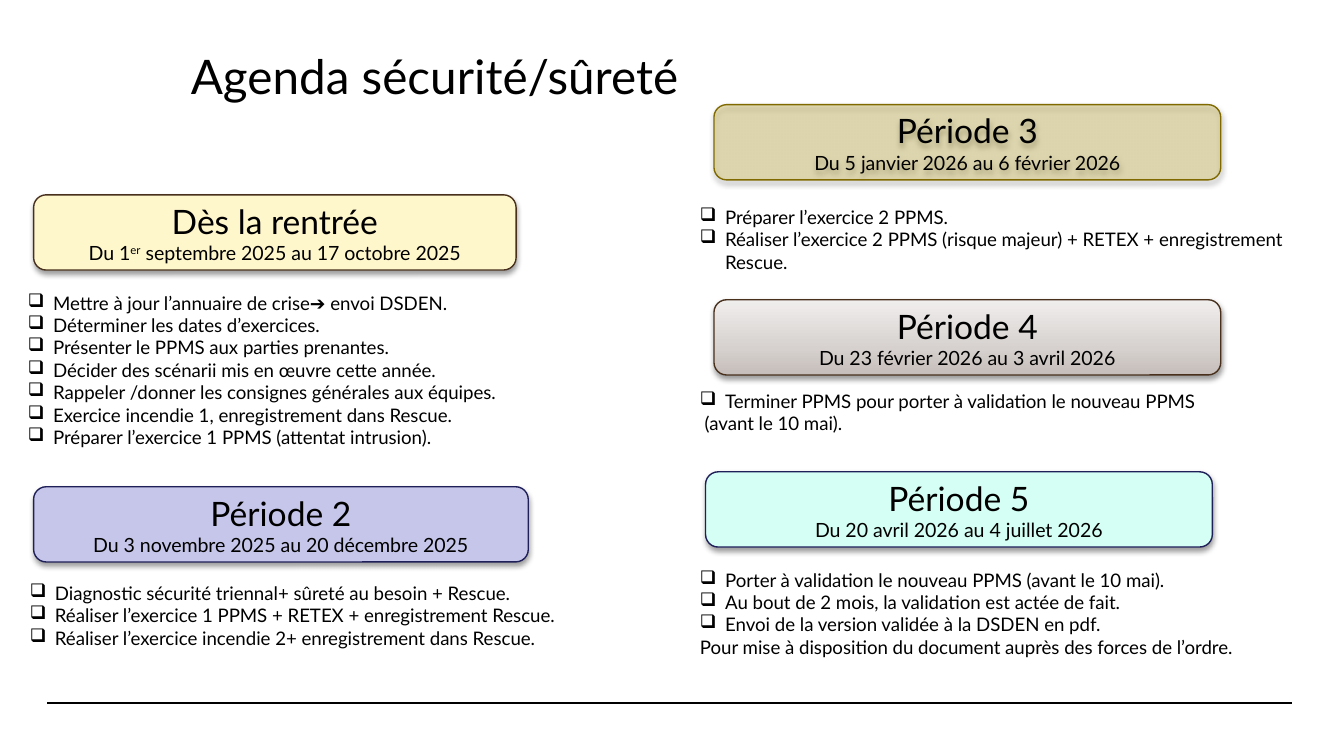
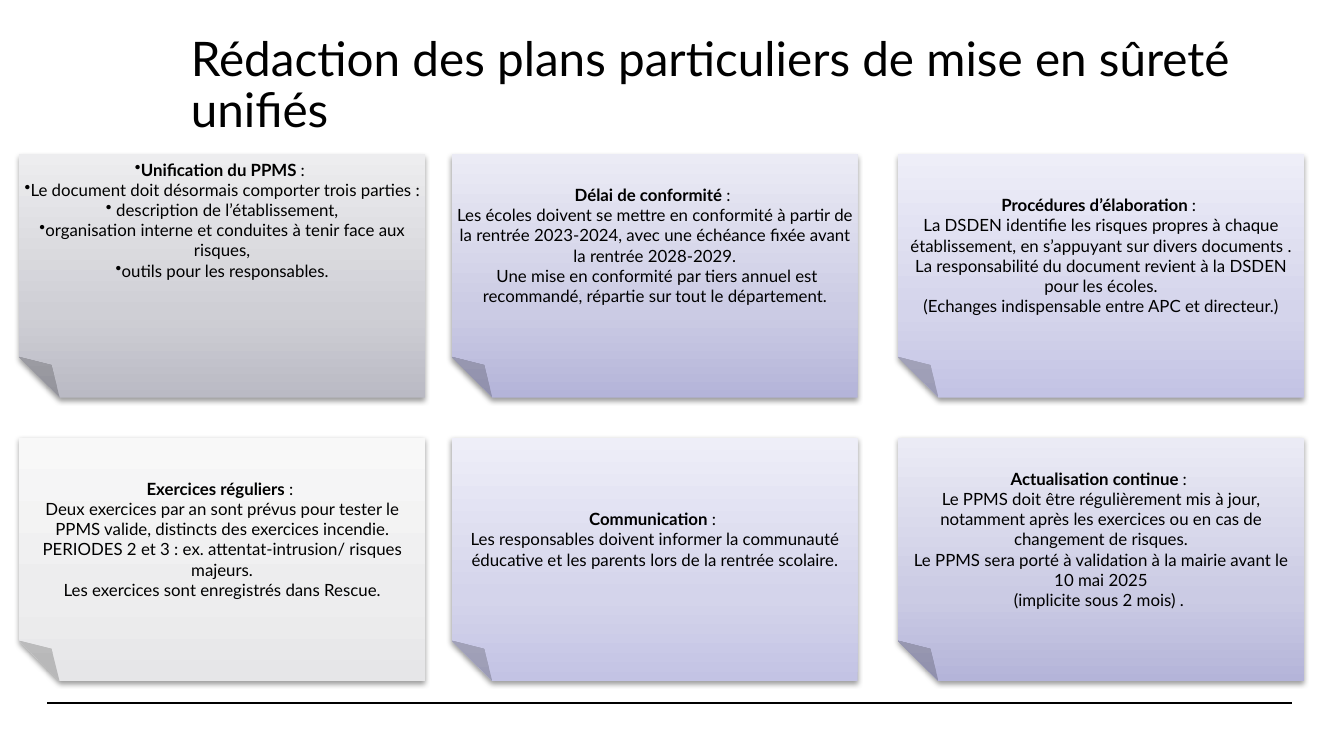
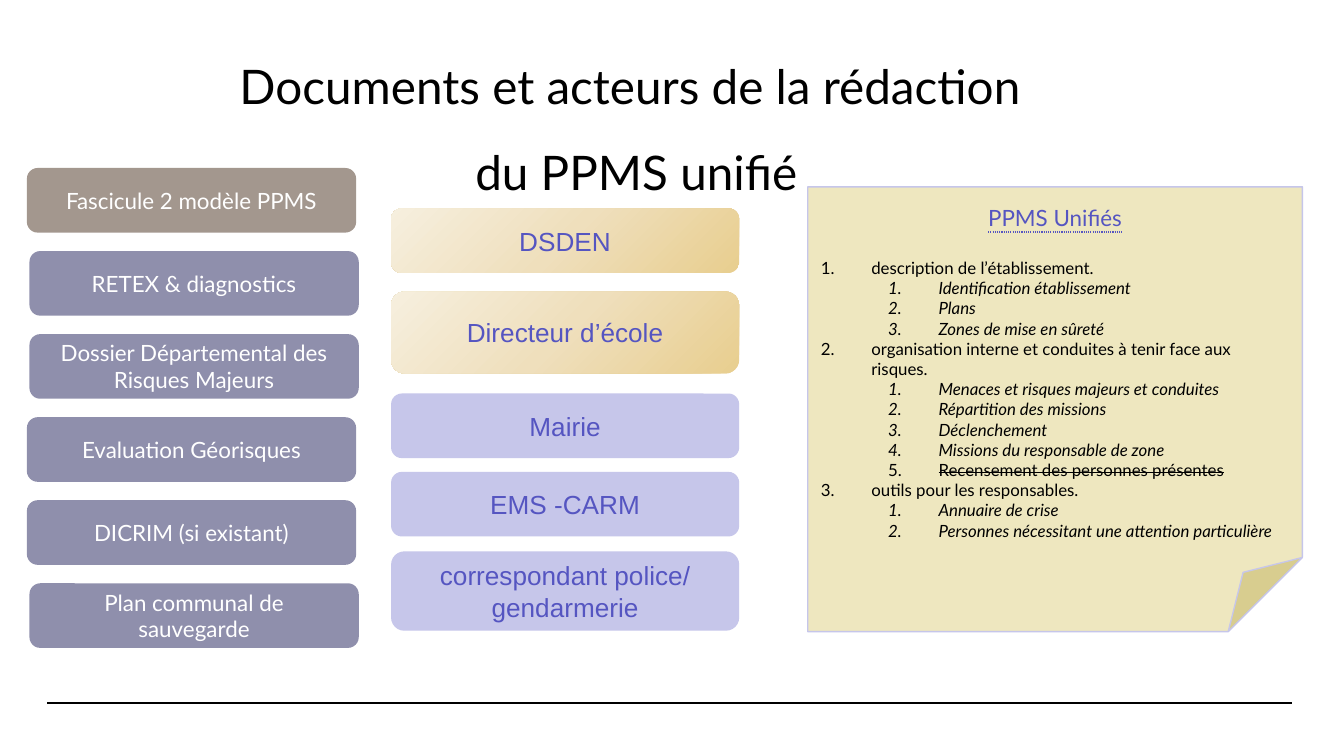
from lxml.etree import SubElement
from pptx import Presentation
from pptx.dml.color import RGBColor
from pptx.enum.shapes import MSO_CONNECTOR, MSO_SHAPE
from pptx.enum.text import MSO_ANCHOR, MSO_UNDERLINE, PP_ALIGN
from pptx.oxml.ns import qn
from pptx.util import Pt

STRAIGHT = MSO_CONNECTOR.STRAIGHT
ROUNDED, FOLDED = MSO_SHAPE.ROUNDED_RECTANGLE, MSO_SHAPE.FOLDED_CORNER
TOP, MIDDLE = MSO_ANCHOR.TOP, MSO_ANCHOR.MIDDLE
LEFT, CENTER = PP_ALIGN.LEFT, PP_ALIGN.CENTER
DOTTED = MSO_UNDERLINE.DOTTED_LINE

COLOURS = {
    "black": "000000", "white": "FFFFFF", "violet": "5555C1",
    "cream": "FFF7CC", "lavender": "C6C6EA", "mint": "D5FFF4",
    "olive": "BFA000", "dark_olive": "806A00",
    "dark_brown": "48301D", "dark_blue": "1F1F59",
    "brown": "49311F", "navy": "21215A",
    "taupe_deep": "C5BDB9", "taupe_mid": "D6D1CE", "taupe_pale": "F0EEED",
    "grey_deep": "BABAC4", "grey_mid": "CFCFD5", "grey_pale": "EDEDEF",
    "iris_deep": "B4B4D9", "iris_mid": "CBCBE4", "iris_pale": "EBEBF5",
    "lilac_deep": "C3C3E4", "lilac_mid": "D4D4EB", "lilac_pale": "EEEEF8",
    "mist_deep": "E6E6E8", "mist_mid": "EDEDEE", "mist_pale": "F8F8F8",
    "gold_deep": "E8CE8F", "gold_mid": "EFDFBC", "gold_pale": "F6EFDE",
}
# Opacity in percent of the see-through fills
OPACITY = {"olive": 25, "brown": 50, "navy": 50}
# Angle and middle stop of the three-tone fills
GRADIENTS = {name: (90, 35) for name in ("taupe", "grey", "iris", "lilac", "mist")}
GRADIENTS["gold"] = (135, 50)

BODY = {"name": "Lato", "size": Pt(10), "color": "black"}
SQUARE, DOT = "❑", "•"
NUMBER = "number"
INSET = (7.2, 3.6, 7.2, 3.6)


def rgb(name):
    return RGBColor.from_string(COLOURS[name])


# Text
def format_run(run, values):
    for key, value in values.items():
        if key == "color":
            run.font.color.rgb = rgb(value)
        elif key in ("baseline", "strike"):
            run._r.get_or_add_rPr().set(key, value)
        else:
            setattr(run.font, key, value)


def write(frame, runs, bullet=None, margin=0, hanging=0, layout=None, **style):
    """Add a paragraph; runs is a string or a list of (text, format) pairs."""
    paragraph = frame.paragraphs[0]
    if paragraph.runs:
        paragraph = frame.add_paragraph()
    for key, value in (layout or {}).items():
        setattr(paragraph, key, value)
    if bullet:
        properties = paragraph._p.get_or_add_pPr()
        properties.set("marL", str(Pt(margin)))
        properties.set("indent", str(-Pt(hanging)))
        if bullet == NUMBER:
            SubElement(properties, qn("a:buAutoNum"), type="arabicPeriod")
        else:
            SubElement(properties, qn("a:buChar"), char=bullet)
    for text, extra in [(runs, {})] if isinstance(runs, str) else runs:
        for index, line in enumerate(text.split("\n")):
            if index:
                paragraph.add_line_break()
            run = paragraph.add_run()
            run.text = line
            format_run(run, {**BODY, **style, **extra})


def prepare_frame(shape, anchor=TOP, inset=INSET):
    frame = shape.text_frame
    frame.word_wrap = True
    frame.vertical_anchor = anchor
    sides = ("margin_left", "margin_top", "margin_right", "margin_bottom")
    for side, length in zip(sides, inset):
        setattr(frame, side, Pt(length))
    return frame


def add_text(shapes, box, anchor=TOP, inset=INSET):
    return prepare_frame(shapes.add_textbox(*map(Pt, box)), anchor, inset)


# Shapes
def paint(shape, fill):
    if fill in GRADIENTS:
        angle, middle = GRADIENTS[fill]
        shape.fill.gradient()
        shape.fill.gradient_angle = angle
        stops = shape._element.spPr.find(".//" + qn("a:gsLst"))
        for stop in list(stops):
            stops.remove(stop)
        for tone, position in (("deep", 0), ("mid", middle), ("pale", 100)):
            stop = SubElement(stops, qn("a:gs"), pos=str(position * 1000))
            SubElement(stop, qn("a:srgbClr"), val=COLOURS[f"{fill}_{tone}"])
        return
    shape.fill.solid()
    shape.fill.fore_color.rgb = rgb(fill)
    if fill in OPACITY:
        colour = shape._element.spPr.find(f"{qn('a:solidFill')}/{qn('a:srgbClr')}")
        SubElement(colour, qn("a:alpha"), val=str(OPACITY[fill] * 1000))


def add_panel(shapes, preset, box, fill, line=None, shadow=False):
    panel = shapes.add_shape(preset, *map(Pt, box))
    paint(panel, fill)
    if line:
        panel.line.color.rgb = rgb(line)
        panel.line.width = Pt(0.75)
    else:
        panel.line.fill.background()
    panel.shadow.inherit = False
    if shadow:
        effects = panel._element.spPr.find(qn("a:effectLst"))
        cast = SubElement(effects, qn("a:outerShdw"), blurRad=str(Pt(3.1)),
                          dist=str(Pt(1.6)), dir="5400000", rotWithShape="0")
        colour = SubElement(cast, qn("a:srgbClr"), val=COLOURS["black"])
        SubElement(colour, qn("a:alpha"), val="38000")
    return panel


# Title and footer rule shared by all slides
def start_slide(deck, title, box, align=LEFT, spacing=0.9):
    slide = deck.slides.add_slide(deck.slide_layouts[6])
    rule = slide.shapes.add_connector(STRAIGHT, Pt(25.2), Pt(376.5), Pt(692), Pt(376.5))
    rule.line.color.rgb = rgb("black")
    rule.line.width = Pt(0.8)
    SubElement(rule._element.spPr, qn("a:effectLst"))
    write(add_text(slide.shapes, box, inset=(0, 0, 0, 0)), title, size=Pt(25.5),
          layout={"alignment": align, "line_spacing": spacing})
    return slide.shapes


# Slide 1: one period, its header and its tasks
def add_period(shapes, header, fill, line, name, dates, tasks_box, tasks, notes=()):
    panel = add_panel(shapes, ROUNDED, (*header, 40.3), fill, line, shadow=True)
    frame = prepare_frame(panel, MIDDLE)
    centred = {"alignment": CENTER}
    write(frame, name, layout=centred, size=Pt(18))
    write(frame, dates, layout=centred, size=Pt(10.5))
    frame = add_text(shapes, tasks_box)
    for task in tasks:
        write(frame, task, SQUARE, 13.5, 13.5)
    for note in notes:
        write(frame, note)


def build_agenda(deck):
    shapes = start_slide(deck, "Agenda sécurité/sûreté", (102.2, 28.8, 583, 90.7))
    add_period(
        shapes, (18, 104.4, 258.5), "cream", "dark_brown", "Dès la rentrée",
        [("Du 1", {}), ("er", {"baseline": "30000"}),
         (" septembre 2025 au 17 octobre 2025", {})],
        (7.9, 152.6, 360, 104.4),
        ["Mettre à jour l’annuaire de crise➔ envoi DSDEN.",
         "Déterminer les dates d’exercices.",
         "Présenter le PPMS aux parties prenantes.",
         "Décider des scénarii mis en œuvre cette année.",
         "Rappeler /donner les consignes générales aux équipes.",
         "Exercice incendie 1, enregistrement dans Rescue.",
         "Préparer l’exercice 1 PPMS (attentat intrusion)."])
    add_period(
        shapes, (18, 260.8, 265), "lavender", "dark_blue", "Période 2",
        "Du 3 novembre 2025 au 20 décembre 2025",
        (8.9, 308.2, 369.4, 44),
        ["Diagnostic sécurité triennal+ sûreté au besoin + Rescue.",
         "Réaliser l’exercice 1 PPMS + RETEX + enregistrement Rescue.",
         "Réaliser l’exercice incendie 2+ enregistrement dans Rescue."])
    add_period(
        shapes, (382.5, 56.1, 271.5), "olive", "dark_olive", "Période 3",
        "Du 5 janvier 2026 au 6 février 2026",
        (367.9, 106.6, 360, 44),
        ["Préparer l’exercice 2 PPMS.",
         "Réaliser l’exercice 2 PPMS (risque majeur) + RETEX + enregistrement Rescue."])
    add_period(
        shapes, (382.5, 160.6, 271.5), "taupe", "dark_brown", "Période 4",
        "Du 23 février 2026 au 3 avril 2026",
        (367.9, 205.2, 346.3, 44),
        ["Terminer PPMS pour porter à validation le nouveau PPMS"],
        [" (avant le 10 mai)."])
    add_period(
        shapes, (378, 252.8, 271.5), "mint", "dark_blue", "Période 5",
        "Du 20 avril 2026 au 4 juillet 2026",
        (367.9, 301, 346.3, 67.7),
        ["Porter à validation le nouveau PPMS (avant le 10 mai).",
         "Au bout de 2 mois, la validation est actée de fait.",
         "Envoi de la version validée à la DSDEN en pdf."],
        ["Pour mise à disposition du document auprès des forces de l’ordre."])


# Slide 2: one folded note
def add_note(shapes, left, top, fill, heading, sentences,
             bullet=None, anchor=MIDDLE, bottom=2.9):
    width, height = 217.5, 130.5
    group = shapes.add_group_shape().shapes
    sheet = add_panel(group, FOLDED, (left, top, width, height), fill, shadow=True)
    sheet._element.spPr.find(qn("a:xfrm")).set("flipH", "1")
    frame = add_text(group, (left, top, width, height * 5 / 6), anchor,
                     (2.9, 2.9, 2.9, bottom))
    centred = {"alignment": CENTER}
    write(frame, [(heading, {"bold": True}), (" : ", {})], bullet,
          layout=centred, size=Pt(9))
    for level, sentence in sentences:
        write(frame, sentence, bullet, layout={**centred, "level": level}, size=Pt(9))


def build_drafting(deck):
    shapes = start_slide(
        deck, "Rédaction des plans particuliers de mise en sûreté unifiés",
        (102.2, 18.7, 575.3, 56.9))
    columns, rows = (10.2, 242, 481), (82.5, 234.5)
    notes = [
        ("grey", "Unification du PPMS",
         [(0, "Le document doit désormais comporter trois parties :"),
          (1, " description de l’établissement,"),
          (1, "organisation interne et conduites à tenir face aux risques,"),
          (1, "outils pour les responsables.")],
         {"bullet": DOT, "anchor": TOP}),
        ("iris", "Délai de conformité",
         [(0, "Les écoles doivent se mettre en conformité à partir de la rentrée "
              "2023-2024, avec une échéance fixée avant la rentrée 2028-2029."),
          (0, " Une mise en conformité par tiers annuel est recommandé, répartie "
              "sur tout le département.")],
         {"bottom": 13.7}),
        ("lilac", "Procédures d’élaboration",
         [(0, "La DSDEN identifie les risques propres à chaque établissement, en "
              "s’appuyant sur divers documents ."),
          (0, "La responsabilité du document revient à la DSDEN pour les écoles."),
          (0, "(Echanges indispensable entre APC et directeur.)")], {}),
        ("mist", "Exercices réguliers",
         [(0, "Deux exercices par an sont prévus pour tester le PPMS valide, "
              "distincts des exercices incendie."),
          (0, "PERIODES 2 et 3 : ex. attentat-intrusion/ risques majeurs."),
          (0, "Les exercices sont enregistrés dans Rescue.")], {}),
        ("lilac", "Communication",
         [(0, "Les responsables doivent informer la communauté éducative et les "
              "parents lors de la rentrée scolaire.")], {}),
        ("iris", "Actualisation continue",
         [(0, "Le PPMS doit être régulièrement mis à jour, notamment après les "
              "exercices ou en cas de changement de risques."),
          (0, "Le PPMS sera porté à validation à la mairie avant le 10 mai 2025"),
          (0, "(implicite sous 2 mois) . ")], {}),
    ]
    for index, (fill, heading, sentences, options) in enumerate(notes):
        row, column = divmod(index, len(columns))
        add_note(shapes, columns[column], rows[row], fill, heading, sentences, **options)


# Slide 3: labelled boxes and the contents sheet
def add_label(shapes, box, fill, label, **style):
    frame = prepare_frame(add_panel(shapes, ROUNDED, box, fill), MIDDLE)
    write(frame, label, layout={"alignment": CENTER}, **style)


def add_documents(shapes, left, top):
    documents = [
        ("Fascicule 2 modèle PPMS", "brown", 0),
        ("RETEX & diagnostics", "navy", 1.4),
        ("Dossier Départemental des Risques Majeurs", "navy", 1.4),
        ("Evaluation Géorisques", "navy", 0),
        ("DICRIM (si existant)", "navy", 0),
        ("Plan communal de sauvegarde", "navy", 1.4),
    ]
    for index, (label, fill, shift) in enumerate(documents):
        add_label(shapes, (left + shift, top + 44.5 * index, 176.4, 34.6), fill, label,
                  size=Pt(12), color="white")


def add_actors(shapes, left, top):
    actors = [
        ("DSDEN", "gold", 0, 34.6),
        ("Directeur d’école", "gold", 44.6, 43.9),
        ("Mairie", "lavender", 99.2, 34.6),
        ("EMS -CARM", "lavender", 141.2, 34.6),
        ("correspondant police/ gendarmerie", "lavender", 183.8, 42.5),
    ]
    for label, fill, offset, height in actors:
        add_label(shapes, (left, top + offset, 186.5, height), fill, label,
                  name="Arial", size=Pt(14), color="violet")


def add_contents(shapes, box):
    chapters = [
        ("description de l’établissement.",
         ["Identification établissement", "Plans", "Zones de mise en sûreté"]),
        ("organisation interne et conduites à tenir face aux risques.",
         ["Menaces et risques majeurs et conduites", "Répartition des missions",
          "Déclenchement", "Missions du responsable de zone",
          "Recensement des personnes présentes"]),
        ("outils pour les responsables.",
         ["Annuaire de crise", "Personnes nécessitant une attention particulière"]),
    ]
    dropped = "Recensement des personnes présentes"
    sheet = add_panel(shapes, FOLDED, box, "olive", "lavender")
    frame = prepare_frame(sheet, MIDDLE)
    write(frame, "PPMS Unifiés", size=Pt(12), color="violet", underline=DOTTED,
          layout={"alignment": CENTER, "space_after": Pt(14.4)})
    for chapter, sections in chapters:
        write(frame, chapter, NUMBER, 27, 27, {"alignment": LEFT}, size=Pt(9))
        for section in sections:
            look = {"strike": "sngStrike"} if section == dropped else {"italic": True}
            write(frame, section, NUMBER, 63, 27, {"alignment": LEFT, "level": 1},
                  size=Pt(9), **look)


def build_documents(deck):
    shapes = start_slide(
        deck, "Documents et acteurs de la rédaction\n du PPMS unifié",
        (34.6, 15.1, 606.2, 43.9), CENTER, 1.5)
    add_contents(shapes, (432.7, 100.1, 265, 238.3))
    add_documents(shapes, 14.4, 90)
    add_actors(shapes, 209.5, 111.6)


def main():
    deck = Presentation()
    deck.slide_width, deck.slide_height = Pt(720), Pt(405)
    build_agenda(deck)
    build_drafting(deck)
    build_documents(deck)
    deck.save("out.pptx")


if __name__ == "__main__":
    main()
